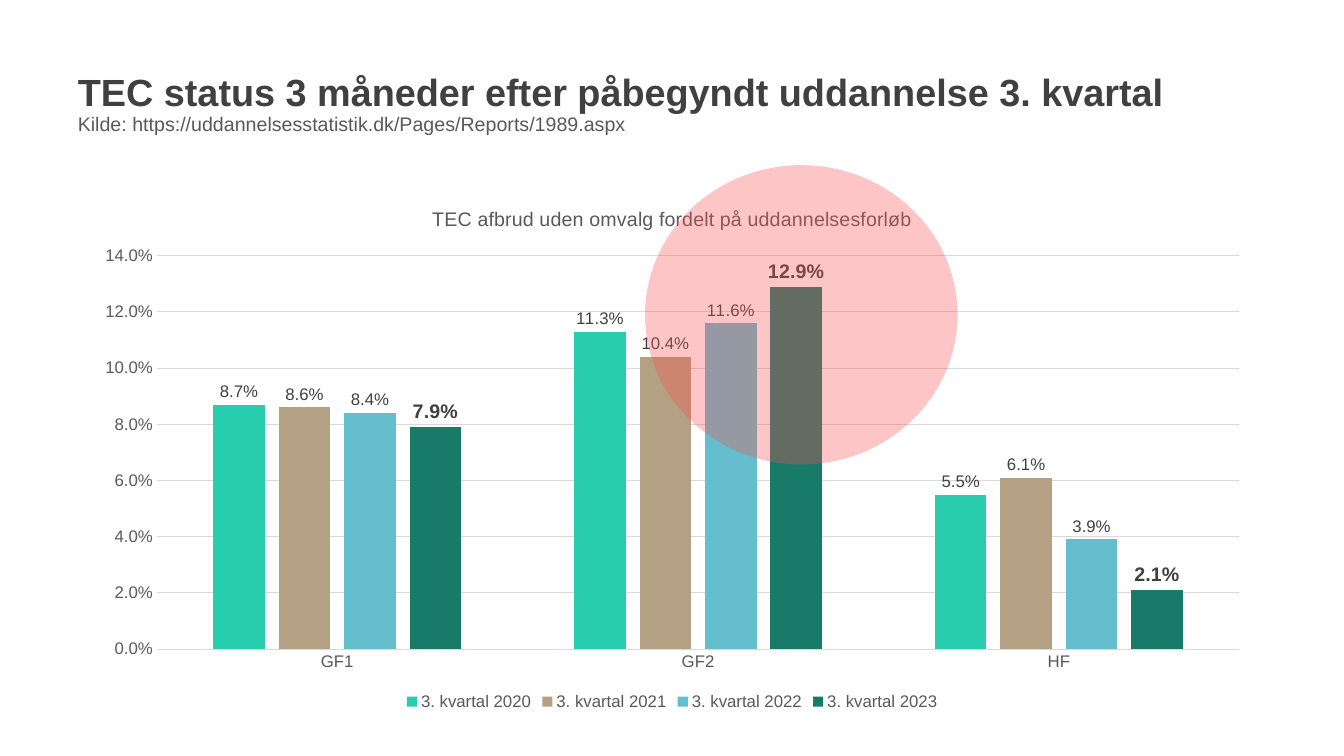
import pptx
import pptx.chart.data
import pptx.dml.color
import pptx.enum.chart
import pptx.enum.shapes
import pptx.enum.text
import pptx.oxml
import pptx.oxml.ns
import pptx.util
from pptx.util import Pt

FONT = "Arial"
DARK, GREY, GRID = "404040", "595959", "D9D9D9"
PERCENT = "0.0%"
LABEL = {"size": Pt(12), "bold": False}
HIGHLIGHT = {"size": Pt(14), "bold": True}

UDDANNELSER = ["GF1", "GF2", "HF"]
KVARTALER = [
    ("3. kvartal 2020", (0.087, 0.113, 0.055), "28CDAF", LABEL),
    ("3. kvartal 2021", (0.086, 0.104, 0.061), "B4A082", LABEL),
    ("3. kvartal 2022", (0.084, 0.116, 0.039), "64BECD", LABEL),
    ("3. kvartal 2023", (0.079, 0.129, 0.021), "187B69", HIGHLIGHT),
]


def rgb(value):
    return pptx.dml.color.RGBColor.from_string(value)


def set_format(target, values):
    for name, value in values.items():
        setattr(target, name, value)


def style_font(font, color, values):
    set_format(font, {"name": FONT, **values})
    font.color.rgb = rgb(color)


def style_line(line, color):
    line.color.rgb = rgb(color)
    line.width = Pt(0.75)


def add_heading(slide, box, title, source):
    frame = slide.shapes.add_textbox(*map(Pt, box)).text_frame
    set_format(frame, {
        "word_wrap": True,
        "vertical_anchor": pptx.enum.text.MSO_ANCHOR.TOP,
    })
    heading = frame.paragraphs[0]
    heading.line_spacing = 0.9
    title_run = heading.add_run()
    title_run.text = title
    style_font(title_run.font, DARK, {"size": Pt(27), "bold": True})
    heading.add_line_break()
    source_run = heading.add_run()
    source_run.text = source
    style_font(source_run.font, GREY, {"size": Pt(14), "bold": False})


def style_axes(chart):
    no_tick = pptx.enum.chart.XL_TICK_MARK.NONE
    for axis in (chart.category_axis, chart.value_axis):
        set_format(axis, {"major_tick_mark": no_tick, "minor_tick_mark": no_tick})
        style_font(axis.tick_labels.font, GREY, LABEL)
    style_line(chart.category_axis.format.line, GRID)
    values = chart.value_axis
    set_format(values, {"minimum_scale": 0, "maximum_scale": 0.14, "major_unit": 0.02})
    set_format(values.tick_labels, {
        "number_format": PERCENT, "number_format_is_linked": False,
    })
    values.format.line.fill.background()
    style_line(values.major_gridlines.format.line, GRID)


def style_series(series, color, label_format):
    series.format.fill.solid()
    series.format.fill.fore_color.rgb = rgb(color)
    series.invert_if_negative = False
    labels = series.data_labels
    set_format(labels, {
        "show_value": True,
        "number_format": PERCENT,
        "number_format_is_linked": False,
        "position": pptx.enum.chart.XL_LABEL_POSITION.OUTSIDE_END,
    })
    style_font(labels.font, DARK, label_format)


def add_column_chart(slide, box, title):
    data = pptx.chart.data.CategoryChartData(number_format=PERCENT)
    data.categories = UDDANNELSER
    for name, shares, _, _ in KVARTALER:
        data.add_series(name, shares)
    chart = slide.shapes.add_chart(
        pptx.enum.chart.XL_CHART_TYPE.COLUMN_CLUSTERED, *map(Pt, box), data
    ).chart
    style_font(chart.font, GREY, LABEL)

    caption = chart.chart_title.text_frame
    caption.text = title
    style_font(caption.paragraphs[0].runs[0].font, GREY, {"size": Pt(14), "bold": False})

    chart.has_legend = True
    set_format(chart.legend, {
        "position": pptx.enum.chart.XL_LEGEND_POSITION.BOTTOM,
        "include_in_layout": False,
    })
    style_font(chart.legend.font, GREY, LABEL)

    style_axes(chart)
    plot = chart.plots[0]
    set_format(plot, {"gap_width": 219, "overlap": -27, "vary_by_categories": False})
    for series, (_, _, color, label_format) in zip(plot.series, KVARTALER):
        style_series(series, color, label_format)


def add_focus_circle(slide, box, color, opacity):
    """Add a see-through ellipse; opacity is in percent."""
    circle = slide.shapes.add_shape(pptx.enum.shapes.MSO_SHAPE.OVAL, *map(Pt, box))
    circle.shadow.inherit = False
    circle.line.fill.background()
    circle.fill.solid()
    circle.fill.fore_color.rgb = rgb(color)
    tint = circle.element.spPr.find(".//" + pptx.oxml.ns.qn("a:srgbClr"))
    tint.append(pptx.oxml.parse_xml(
        f'<a:alpha {pptx.oxml.ns.nsdecls("a")} val="{opacity * 1000}"/>'
    ))


def main():
    deck = pptx.Presentation()
    set_format(deck, {"slide_width": Pt(960), "slide_height": Pt(540)})
    slide = deck.slides.add_slide(deck.slide_layouts[6])
    add_heading(
        slide, (48.5, 49, 853, 84),
        "TEC status 3 måneder efter påbegyndt uddannelse 3. kvartal",
        "Kilde: https://uddannelsesstatistik.dk/Pages/Reports/1989.aspx",
    )
    add_column_chart(
        slide, (58.3, 133.2, 843.8, 377.3),
        "TEC afbrud uden omvalg fordelt på uddannelsesforløb",
    )
    add_focus_circle(slide, (460.8, 118, 223.2, 213.8), "FA5050", 33)
    deck.save("out.pptx")


if __name__ == "__main__":
    main()
